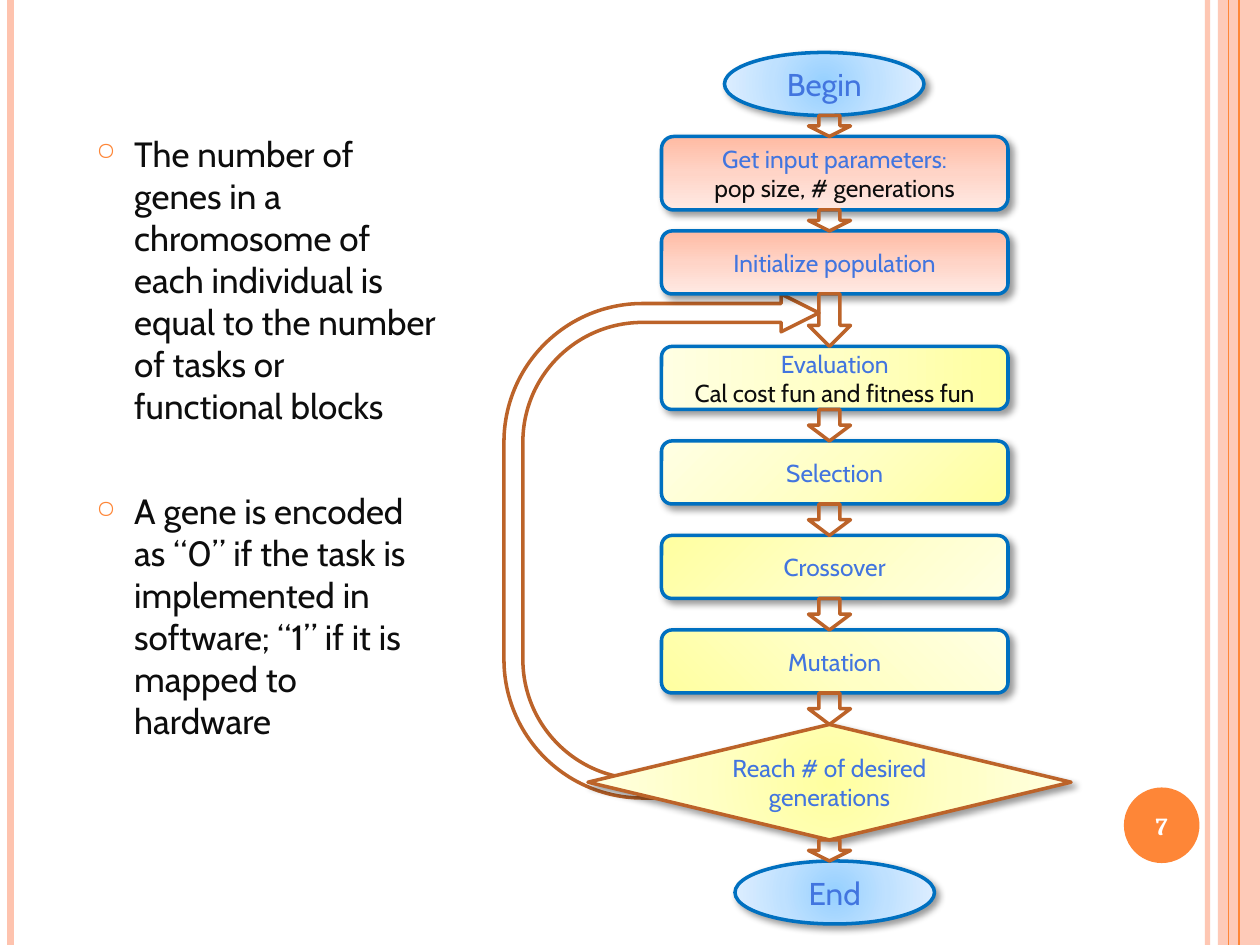
"""Build a slide that explains gene encoding beside a genetic algorithm flowchart."""

from dataclasses import dataclass
from itertools import pairwise
from typing import Optional

from lxml.etree import SubElement
from pptx import Presentation
from pptx.dml.color import RGBColor
from pptx.enum.shapes import MSO_CONNECTOR, MSO_SHAPE
from pptx.enum.text import MSO_ANCHOR, PP_ALIGN
from pptx.oxml import parse_xml
from pptx.oxml.ns import nsdecls, qn
from pptx.shapes.autoshape import Shape
from pptx.slide import Slide
from pptx.text.text import _Paragraph as Paragraph
from pptx.util import Pt


@dataclass(frozen=True)
class Theme:
    heading_font: str = "Cabin"
    number_font: str = "Cambria"
    body_size: int = 20
    terminal_size: int = 18
    step_size: int = 14
    ink: str = "0D0D0D"
    label: str = "4275DF"
    white: str = "FFFFFF"
    orange: str = "FE8637"
    peach: str = "FEC3AE"
    brown: str = "BC6329"
    blue: str = "0070C0"
    sky_stops: tuple[str, ...] = ("96D0FF", "BFE1FF", "E0EFFF")
    coral_stops: tuple[str, ...] = ("FFBBA3", "FFD4C7", "FFEAE4")
    yellow_stops: tuple[str, ...] = ("FFFFA0", "FFFFC5", "FFFFE3")


THEME = Theme()


@dataclass(frozen=True)
class Gradient:
    stops: tuple[str, ...]
    angle: int = 0
    focus: Optional[tuple[int, int, int, int]] = None


@dataclass(frozen=True)
class Step:
    title: str
    top: float
    gradient: Gradient
    detail: str = ""
    height: float = 36
    left: float = 378
    width: float = 198
    kind: MSO_SHAPE = MSO_SHAPE.FLOWCHART_ALTERNATE_PROCESS
    line: str = THEME.blue
    size: int = THEME.step_size


@dataclass(frozen=True)
class Stripe:
    x: float
    width: float
    color: str
    opacity: int = 100


CENTER = (50, 50, 50, 50)
SKY = Gradient(THEME.sky_stops, focus=CENTER)
CORAL = Gradient(THEME.coral_stops, angle=90)
TERMINAL = {"width": 114, "kind": MSO_SHAPE.OVAL, "size": THEME.terminal_size}

STEPS = (
    Step("Begin", 30, SKY, left=414, **TERMINAL),
    Step("Get input parameters:", 78, CORAL, "pop size, # generations", height=42),
    Step("Initialize population", 132, CORAL),
    Step("Evaluation", 198, Gradient(THEME.yellow_stops, angle=180), "Cal cost fun and fitness fun"),
    Step("Selection", 252, Gradient(THEME.yellow_stops, focus=(100, 100, 0, 0))),
    Step("Crossover", 306, Gradient(THEME.yellow_stops, focus=(0, 0, 100, 100))),
    Step("Mutation", 360, Gradient(THEME.yellow_stops, angle=315)),
    Step("Reach # of desired generations", 414, Gradient(THEME.yellow_stops, focus=CENTER),
         height=66, left=336, width=276, kind=MSO_SHAPE.FLOWCHART_DECISION, line=THEME.brown),
    Step("End", 492, SKY, left=420, **TERMINAL),
)
STRIPES = (
    Stripe(690, 3, THEME.peach, 93),
    Stripe(6, 4.5, THEME.peach),
    Stripe(708, 1.5, THEME.orange),
    Stripe(702, 0.75, THEME.orange),
)
NOTES = (
    ("The number of genes in a chromosome of each individual is equal to the number "
     "of tasks or functional blocks", 6),
    ("A gene is encoded as “0” if the task is implemented in software; "
     "“1” if it is mapped to hardware", 36),
)


def set_opacity(element, percent: int) -> None:
    color = next(element.iter(qn("a:srgbClr")))
    SubElement(color, qn("a:alpha"), val=str(percent * 1000))


def style_paragraph(paragraph: Paragraph, size: int, color: str,
                    font_name: str = THEME.heading_font) -> None:
    font = paragraph.font
    font.name, font.size = font_name, Pt(size)
    font.color.rgb = RGBColor.from_string(color)


def add_shape(slide: Slide, kind: MSO_SHAPE, left: float, top: float, width: float,
              height: float, fill: Optional[str] = None, line: Optional[str] = None) -> Shape:
    shape = slide.shapes.add_shape(kind, Pt(left), Pt(top), Pt(width), Pt(height))
    shape.shadow.inherit = False
    if fill:
        shape.fill.solid()
        shape.fill.fore_color.rgb = RGBColor.from_string(fill)
    else:
        shape.fill.background()
    if line:
        shape.line.color.rgb = RGBColor.from_string(line)
        shape.line.width = Pt(2)
    else:
        shape.line.fill.background()
    return shape


def apply_gradient(shape: Shape, gradient: Gradient) -> None:
    stops = "".join(f'<a:gs pos="{index * 50000}"><a:srgbClr val="{color}"/></a:gs>'
                    for index, color in enumerate(gradient.stops))
    if gradient.focus:
        sides = " ".join(f'{side}="{value * 1000}"' for side, value in zip("ltrb", gradient.focus))
        direction = f'<a:path path="circle"><a:fillToRect {sides}/></a:path>'
    else:
        direction = f'<a:lin ang="{gradient.angle * 60000}" scaled="0"/>'
    properties = shape.element.spPr
    properties.replace(properties.find(qn("a:noFill")), parse_xml(
        f'<a:gradFill {nsdecls("a")} rotWithShape="1"><a:gsLst>{stops}</a:gsLst>{direction}</a:gradFill>'))


def apply_shadow(shape: Shape) -> None:
    effects = shape.element.spPr.find(qn("a:effectLst"))
    effects.append(parse_xml(
        f'<a:outerShdw {nsdecls("a")} blurRad="{Pt(4)}" dist="{Pt(3)}" dir="{45 * 60000}" '
        'algn="tl" rotWithShape="0"><a:srgbClr val="000000"><a:alpha val="40000"/></a:srgbClr></a:outerShdw>'))


def add_step(slide: Slide, step: Step) -> None:
    shape = add_shape(slide, step.kind, step.left, step.top, step.width, step.height, line=step.line)
    apply_gradient(shape, step.gradient)
    apply_shadow(shape)
    frame = shape.text_frame
    frame.word_wrap, frame.vertical_anchor = True, MSO_ANCHOR.MIDDLE
    frame.text = "\n".join(filter(None, (step.title, step.detail)))
    for paragraph, color in zip(frame.paragraphs, (THEME.label, THEME.ink)):
        paragraph.alignment = PP_ALIGN.CENTER
        style_paragraph(paragraph, step.size, color)


def add_stripe(slide: Slide, stripe: Stripe, height: int) -> None:
    connector = slide.shapes.add_connector(MSO_CONNECTOR.STRAIGHT, Pt(stripe.x), 0, Pt(stripe.x), height)
    connector.line.width = Pt(stripe.width)
    connector.line.color.rgb = RGBColor.from_string(stripe.color)
    properties = connector.element.spPr
    set_opacity(properties, stripe.opacity)
    SubElement(properties, qn("a:effectLst"))


def add_badge(slide: Slide) -> None:
    badge = add_shape(slide, MSO_SHAPE.OVAL, 642.24, 450, 43.2, 43.2, fill=THEME.orange)
    frame = badge.text_frame
    frame.vertical_anchor = MSO_ANCHOR.MIDDLE
    frame.text = "7"
    paragraph = frame.paragraphs[0]
    paragraph.alignment = PP_ALIGN.CENTER
    style_paragraph(paragraph, THEME.step_size, THEME.white, THEME.number_font)
    paragraph.font.bold = True


def add_notes(slide: Slide) -> None:
    frame = slide.shapes.add_textbox(Pt(48), Pt(72), Pt(210), Pt(414)).text_frame
    frame.word_wrap = True
    frame.text = "\n".join(text for text, _ in NOTES)
    for paragraph, (_, gap) in zip(frame.paragraphs, NOTES):
        paragraph.space_before = Pt(gap)
        properties = paragraph._p.get_or_add_pPr()
        properties.set("marL", str(Pt(21.6)))
        properties.set("indent", str(-Pt(21.6)))
        SubElement(SubElement(properties, qn("a:buClr")), qn("a:srgbClr"), val=THEME.orange)
        SubElement(properties, qn("a:buSzPct"), val="70000")
        SubElement(properties, qn("a:buChar"), char="○")
        style_paragraph(paragraph, THEME.body_size, THEME.ink)


def add_flowchart(slide: Slide) -> None:
    loop = add_shape(slide, MSO_SHAPE.U_TURN_ARROW, 234, 222, 288, 180, line=THEME.brown)
    loop.rotation = 270
    for index, value in enumerate((0.06, 0.06, 0.12, 0.44, 1)):
        loop.adjustments[index] = value
    for step in STEPS:
        add_step(slide, step)
    for step, following in pairwise(STEPS):
        bottom = step.top + step.height
        add_shape(slide, MSO_SHAPE.DOWN_ARROW, 462, bottom, 24, following.top - bottom, line=THEME.brown)


def main() -> None:
    presentation = Presentation()
    presentation.slide_width, presentation.slide_height = Pt(720), Pt(540)
    slide = presentation.slides.add_slide(presentation.slide_layouts[6])
    band = add_shape(slide, MSO_SHAPE.RECTANGLE, 696, 0, 24, 540, fill=THEME.peach)
    set_opacity(band.element.spPr, 87)
    for stripe in STRIPES:
        add_stripe(slide, stripe, presentation.slide_height)
    add_badge(slide)
    add_notes(slide)
    add_flowchart(slide)
    presentation.save("out.pptx")


if __name__ == "__main__":
    main()
